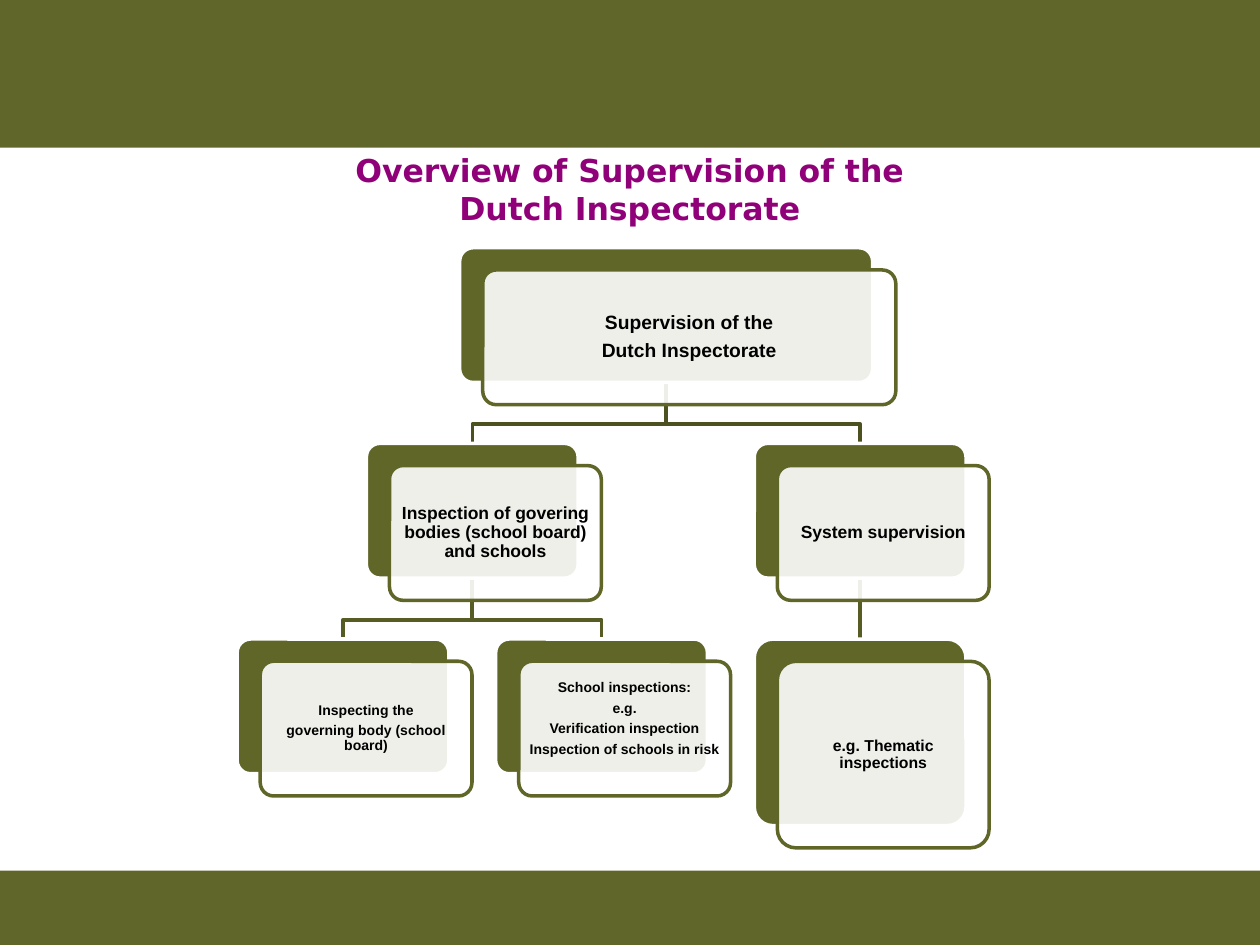
from dataclasses import dataclass

from lxml import etree
from pptx import Presentation
from pptx.dml.color import RGBColor
from pptx.enum.shapes import MSO_CONNECTOR, MSO_SHAPE
from pptx.enum.text import MSO_ANCHOR, PP_ALIGN
from pptx.oxml.ns import qn
from pptx.util import Pt

RECTANGLE = MSO_SHAPE.RECTANGLE
ROUNDED = MSO_SHAPE.ROUNDED_RECTANGLE
STRAIGHT = MSO_CONNECTOR.STRAIGHT
TOP = MSO_ANCHOR.TOP
MIDDLE = MSO_ANCHOR.MIDDLE
CENTER = PP_ALIGN.CENTER

OLIVE = "606528"
BAND = "60652A"
WHITE = "FFFFFF"
BLACK = "000000"
PURPLE = "900079"
UPPER_LINK = "4D5120"
LOWER_LINK = "575C24"

LEFT, COLUMN_STEP = 135.5, 147.75
FIRST_ROW, ROW_STEP = 141.6, 111.8
CARD_WIDTH, CARD_HEIGHT = 121, 77
OFFSET_X, OFFSET_Y = 13.2, 12.7
BEND_ABOVE_CHILD = 11


@dataclass
class Node:
    column: float
    level: int
    size: int
    lines: list
    width: float = CARD_WIDTH
    height: float = CARD_HEIGHT
    lift: float = 0

    @property
    def center(self):
        return LEFT + self.column * COLUMN_STEP + CARD_WIDTH / 2

    @property
    def left(self):
        return self.center - self.width / 2

    @property
    def top(self):
        return FIRST_ROW + self.level * ROW_STEP

    @property
    def bottom(self):
        return self.top + self.height


def color(value):
    return RGBColor.from_string(value)


def style_span(span, size, font, value):
    span.font.size = Pt(size)
    span.font.name = font
    span.font.bold = True
    span.font.color.rgb = color(value)


def add_box(page, kind, left, top, width, height, fill, line=None):
    box = page.shapes.add_shape(kind, Pt(left), Pt(top), Pt(width), Pt(height))
    box.shadow.inherit = False
    box.fill.solid()
    box.fill.fore_color.rgb = color(fill)
    if line:
        box.adjustments[0] = 0.1
        box.line.color.rgb = color(line)
        box.line.width = Pt(2)
    else:
        box.line.fill.background()
    return box


def set_opacity(box, percent):
    fill = box.fill._xPr.find(qn("a:solidFill"))
    alpha = etree.SubElement(fill[0], qn("a:alpha"))
    alpha.set("val", str(percent * 1000))


def write_lines(box, node):
    frame = box.text_frame
    frame.word_wrap = True
    frame.vertical_anchor = MIDDLE
    margin = Pt(node.size * 0.3)
    frame.margin_left = frame.margin_right = frame.margin_top = margin
    frame.margin_bottom = margin + Pt(node.lift)
    for index, line in enumerate(node.lines):
        para = frame.paragraphs[0] if index == 0 else frame.add_paragraph()
        para.alignment = CENTER
        para.line_spacing = 0.9
        para.space_after = Pt(node.size * 0.4)
        span = para.add_run()
        span.text = line
        style_span(span, node.size, "Arial", BLACK)


def add_node(page, node):
    add_box(page, ROUNDED, node.left, node.top, node.width, node.height, OLIVE, WHITE)
    card = add_box(page, ROUNDED, node.left + OFFSET_X, node.top + OFFSET_Y,
                   node.width, node.height, WHITE, OLIVE)
    set_opacity(card, 90)
    write_lines(card, node)


def add_link(page, parent, child, value):
    start, end = parent.center, child.center
    if start == end:
        link = page.shapes.add_connector(
            STRAIGHT, Pt(start), Pt(parent.bottom), Pt(end), Pt(child.top))
        etree.SubElement(link._element.spPr, qn("a:effectLst"))
    else:
        bend = child.top - BEND_ABOVE_CHILD
        builder = page.shapes.build_freeform(Pt(start), Pt(parent.bottom))
        points = [(start, bend), (end, bend), (end, child.top)]
        builder.add_line_segments([(Pt(x), Pt(y)) for x, y in points], close=False)
        link = builder.convert_to_shape()
        link.shadow.inherit = False
        link.fill.background()
    link.line.color.rgb = color(value)
    link.line.width = Pt(2)


def add_title(page, lines):
    title = page.shapes.title
    title.left, title.top, title.width, title.height = Pt(37.4), Pt(82.8), Pt(645), Pt(51)
    frame = title.text_frame
    frame.word_wrap = True
    frame.vertical_anchor = TOP
    para = frame.paragraphs[0]
    para.alignment = CENTER
    for index, line in enumerate(lines):
        if index:
            para.add_line_break()
        span = para.add_run()
        span.text = line
        style_span(span, 18, "DejaVu Sans", PURPLE)


def main():
    deck = Presentation()
    deck.slide_width, deck.slide_height = Pt(720), Pt(540)
    page = deck.slides.add_slide(deck.slide_layouts[5])
    add_box(page, RECTANGLE, 0, 0, 720, 84.4, BAND)
    add_box(page, RECTANGLE, 0, 497.6, 720, 42.4, BAND)
    add_title(page, ["Overview of Supervision of the", "Dutch Inspectorate"])

    root = Node(1.25, 0, 11, ["Supervision of the", "Dutch Inspectorate"], width=236)
    schools = Node(0.5, 1, 10, ["Inspection of govering bodies (school board) and schools"])
    system = Node(2, 1, 10, ["System supervision"])
    board = Node(0, 2, 8, ["Inspecting the", "governing body (school board)"])
    visits = Node(1, 2, 8, ["School inspections:", "e.g.", "Verification inspection",
                            "Inspection of schools in risk"], lift=11)
    themes = Node(2, 2, 9, ["e.g. Thematic inspections"], height=106.6)

    for parent, child in [(system, themes), (schools, visits), (schools, board)]:
        add_link(page, parent, child, LOWER_LINK)
    for child in [system, schools]:
        add_link(page, root, child, UPPER_LINK)
    for node in [root, schools, board, visits, system, themes]:
        add_node(page, node)
    deck.save("out.pptx")


if __name__ == "__main__":
    main()
